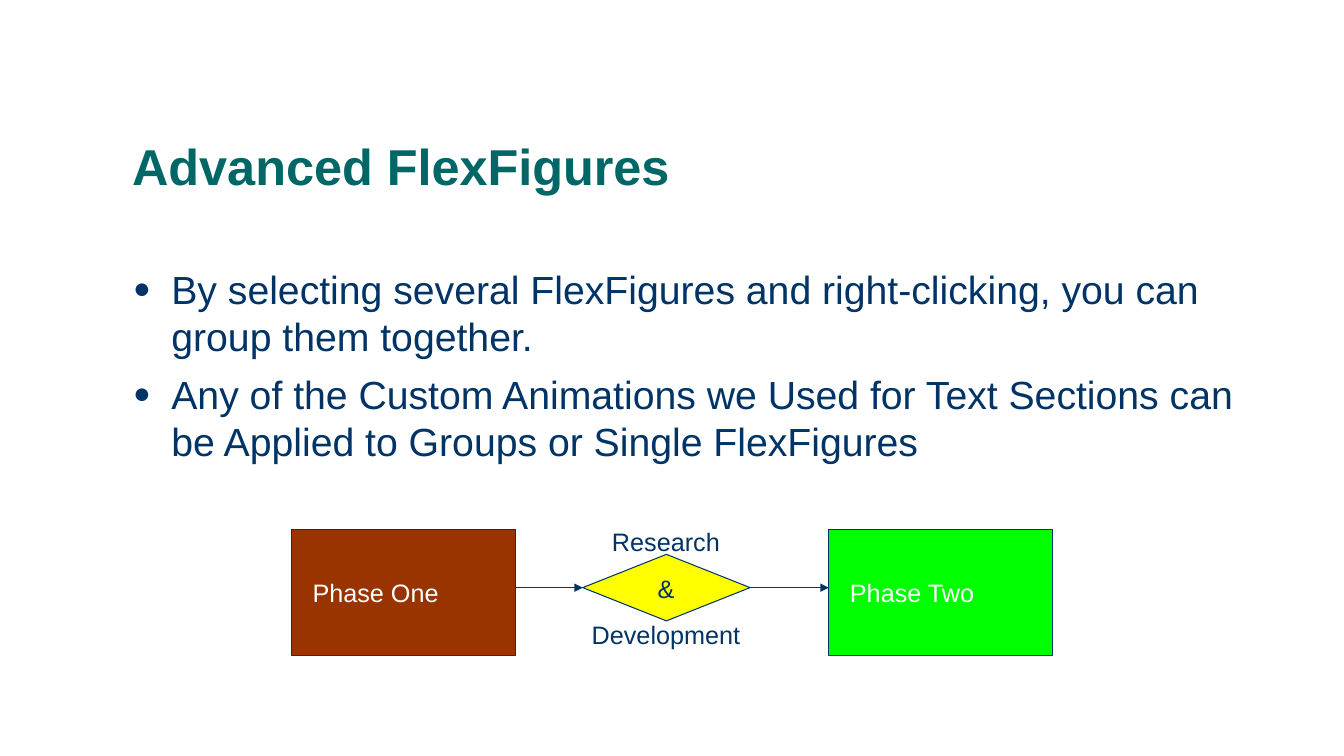
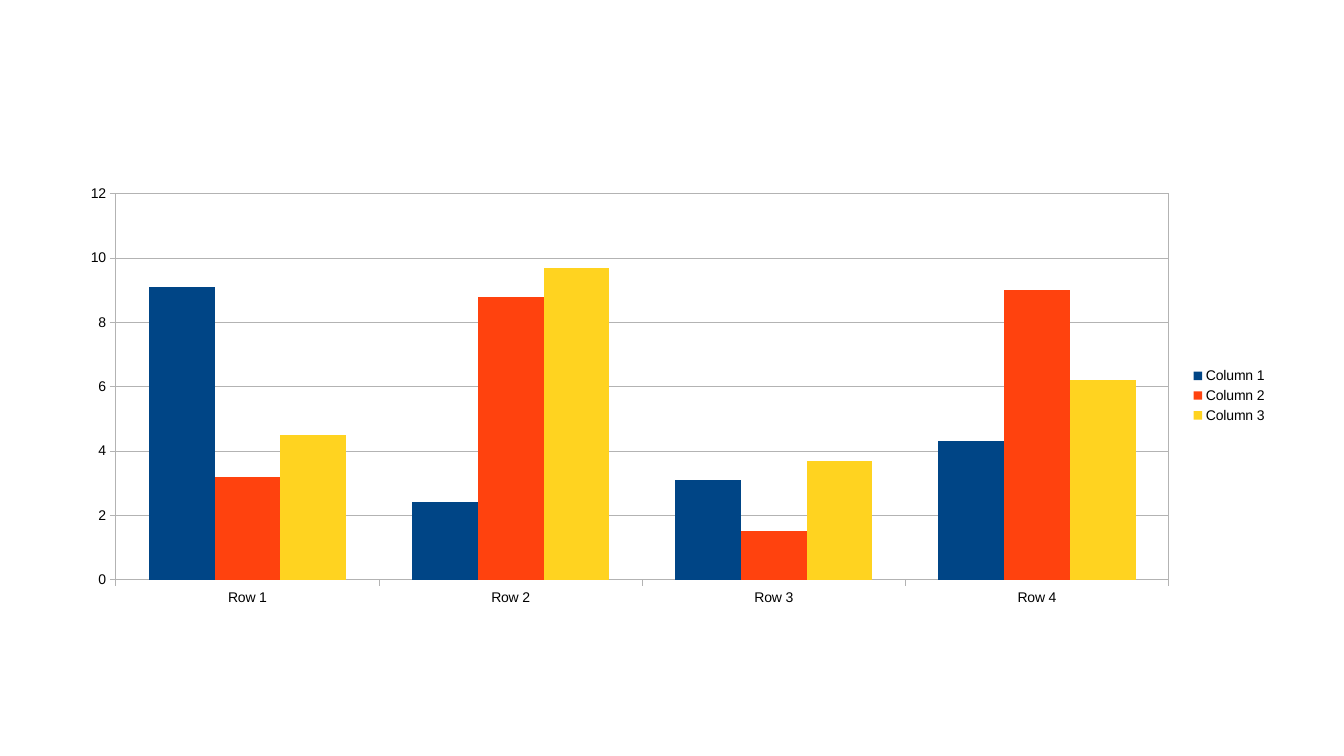
"""Build two slides: a grouped flow of shapes and a column chart."""
from lxml import etree
from pptx import Presentation
from pptx import util as u
from pptx.chart import data
from pptx.dml.color import RGBColor
from pptx.enum import chart as ch
from pptx.enum import shapes, text
from pptx.oxml import parse_xml
from pptx.oxml.ns import nsdecls, qn

FONT = "Arial"
HUES = {"title": "006666", "ink": "003366", "white": "FFFFFF", "black": "000000",
        "brown": "993300", "green": "00FF00", "yellow": "FFFF00", "grid": "B3B3B3"}
TITLE = "Advanced FlexFigures"
POINTS = [
    "By selecting several FlexFigures and right-clicking, you can group them together.",
    "Any of the Custom Animations we Used for Text Sections can be Applied to Groups or Single FlexFigures",
]
PHASES = [("Phase One", "brown", 2.89), ("Phase Two", "green", 8.22)]
LINK = ["Research", "&", "Development"]
BOX_W, BOX_H, BOX_Y = 2.22, 1.25, 5.25
GEM_X, GEM_W, GEM_H, MID = 5.78, 1.66, 0.66, 5.83
ROWS = ["Row 1", "Row 2", "Row 3", "Row 4"]
COLS = [("Column 1", "004586", (9.1, 2.4, 3.1, 4.3)),
        ("Column 2", "FF420E", (3.2, 8.8, 1.5, 9)),
        ("Column 3", "FFD320", (4.5, 9.7, 3.7, 6.2))]
PLOT = {"x": 0.04, "y": 0.04, "w": 0.87, "h": 0.88}


def rgb(hue):
    return RGBColor.from_string(HUES.get(hue, hue))


def inches(*sizes):
    return [u.Inches(size) for size in sizes]


def place(shape, *box):
    shape.left, shape.top, shape.width, shape.height = inches(*box)


def write(frame, lines, size, hue, bold=False, align=text.PP_ALIGN.LEFT, before=0, space=1.0):
    frame.word_wrap = True
    frame.auto_size = text.MSO_AUTO_SIZE.NONE
    for i, line in enumerate(lines):
        para = frame.paragraphs[0] if i == 0 else frame.add_paragraph()
        para.alignment, para.line_spacing = align, space
        para.space_before, para.space_after = u.Pt(before), u.Pt(0.3)
        run = para.add_run()
        run.text = line
        font = run.font
        font.name, font.size, font.bold = FONT, u.Pt(size), bold
        font.color.rgb = rgb(hue)


def bullet(para):
    props = para._p.get_or_add_pPr()
    props.set("marL", str(u.Inches(0.38)))
    props.set("indent", str(u.Inches(-0.38)))
    tint = etree.SubElement(props, qn("a:buClr"))
    etree.SubElement(tint, qn("a:srgbClr"), val=HUES["ink"])
    etree.SubElement(props, qn("a:buSzPct"), val="75000")
    etree.SubElement(props, qn("a:buFont"), typeface=FONT)
    etree.SubElement(props, qn("a:buChar"), char="●")


def block(group, kind, hue, *box):
    shape = group.shapes.add_shape(kind, *inches(*box))
    shape.shadow.inherit = False
    shape.fill.solid()
    shape.fill.fore_color.rgb = rgb(hue)
    shape.line.color.rgb = rgb("ink")
    shape.line.width = u.Pt(0.75)
    return shape


def arrow(group, start, end):
    line = group.shapes.add_connector(shapes.MSO_CONNECTOR.STRAIGHT,
                                      *inches(start, MID, end, MID))
    line.line.color.rgb = rgb("ink")
    line.line.width = u.Pt(0.75)
    props = line._element.spPr
    etree.SubElement(props.find(qn("a:ln")), qn("a:tailEnd"), type="triangle")
    etree.SubElement(props, qn("a:effectLst"))


def flow(deck):
    slide = deck.slides.add_slide(deck.slide_layouts[1])
    head, body = slide.placeholders
    place(head, 1.21, 0.91, 11.34, 1.09)
    write(head.text_frame, [TITLE], 36, "title", bold=True, before=0.3, space=0.9)
    head.text_frame.vertical_anchor = text.MSO_ANCHOR.BOTTOM
    place(body, 1.22, 2.58, 11.22, 4.07)
    write(body.text_frame, POINTS, 28, "ink", before=7.3)
    for para in body.text_frame.paragraphs:
        bullet(para)

    for name, hue, left in PHASES:
        group = slide.shapes.add_group_shape()
        box = block(group, shapes.MSO_SHAPE.FLOWCHART_PROCESS, hue,
                    left, BOX_Y, BOX_W, BOX_H)
        box.text_frame.margin_left = u.Inches(0.21)
        write(box.text_frame, [name], 18, "white")

    group = slide.shapes.add_group_shape()
    block(group, shapes.MSO_SHAPE.FLOWCHART_DECISION, "yellow",
          GEM_X, MID - GEM_H / 2, GEM_W, GEM_H)
    arrow(group, PHASES[0][2] + BOX_W, GEM_X)
    arrow(group, GEM_X + GEM_W, PHASES[1][2])
    label = group.shapes.add_textbox(*inches(5.44, 5.17, 2.33, 1.33))
    write(label.text_frame, LINK, 18, "ink", align=text.PP_ALIGN.CENTER, before=11.5)


def frame_plot(chart):
    area = chart._chartSpace.chart.plotArea
    for old in area.findall(qn("c:layout")):
        area.remove(old)
    spots = "".join(f'<c:{key} val="{val}"/>' for key, val in PLOT.items())
    area.insert(0, parse_xml(
        f'<c:layout {nsdecls("c")}><c:manualLayout><c:layoutTarget val="inner"/>'
        f'<c:xMode val="edge"/><c:yMode val="edge"/>{spots}</c:manualLayout></c:layout>'))
    area.append(parse_xml(
        f'<c:spPr {nsdecls("c", "a")}><a:noFill/><a:ln w="0"><a:solidFill>'
        f'<a:srgbClr val="{HUES["grid"]}"/></a:solidFill></a:ln></c:spPr>'))


def bars(deck):
    slide = deck.slides.add_slide(deck.slide_layouts[6])
    table = data.CategoryChartData()
    table.categories = ROWS
    for name, _, vals in COLS:
        table.add_series(name, vals)
    chart = slide.shapes.add_chart(ch.XL_CHART_TYPE.COLUMN_CLUSTERED,
                                   *inches(0.67, 1.75, 12, 4.35), table).chart
    chart.has_title = False
    chart.font.name, chart.font.size = FONT, u.Pt(10)
    chart.font.color.rgb = rgb("black")
    chart.has_legend = True
    chart.legend.position = ch.XL_LEGEND_POSITION.RIGHT
    chart.legend.include_in_layout = False
    plot = chart.plots[0]
    plot.gap_width, plot.overlap, plot.vary_by_categories = 100, 0, False
    for series, (_, hue, _) in zip(plot.series, COLS):
        series.format.fill.solid()
        series.format.fill.fore_color.rgb = rgb(hue)
    axis = chart.value_axis
    axis.minimum_scale, axis.maximum_scale, axis.major_unit = 0, 12, 2
    for part in (axis, chart.category_axis, axis.major_gridlines):
        part.format.line.color.rgb = rgb("grid")
        part.format.line.width = u.Pt(0)
    for part in (axis, chart.category_axis):
        part.major_tick_mark = ch.XL_TICK_MARK.OUTSIDE
        part.minor_tick_mark = ch.XL_TICK_MARK.NONE
    frame_plot(chart)


def main():
    deck = Presentation()
    deck.slide_width, deck.slide_height = inches(13.33, 7.5)
    flow(deck)
    bars(deck)
    deck.save("out.pptx")


if __name__ == "__main__":
    main()
